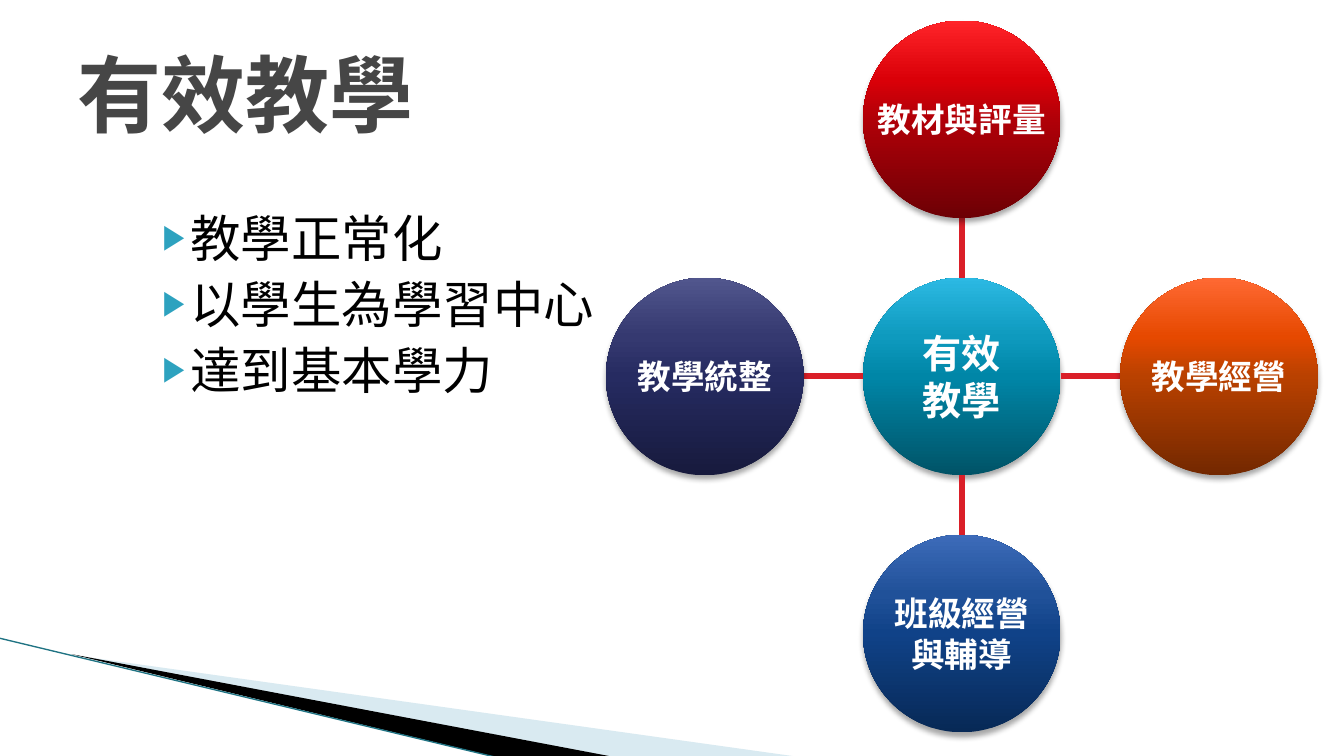
"""Builds the effective teaching slide: a short list beside a hub of five circles."""
from dataclasses import dataclass

from lxml import etree
from pptx import Presentation
from pptx import util as u
from pptx.dml import color
from pptx.enum import shapes, text
from pptx.oxml import ns


@dataclass(frozen=True)
class Theme:
    heading_font: str = "Noto Sans Mono"
    circle_font: str = "Arial"
    title_size: int = 60
    body_size: int = 36
    hub_size: int = 28
    circle_size: int = 24
    title: str = "464646"
    ink: str = "000000"
    white: str = "FFFFFF"
    bullet: str = "2DA2BF"
    spoke: str = "DA1F28"
    pale_wedge: str = "A0CBDC"
    edge: str = "1F7383"
    teal: tuple = ("005367", "0086A7", "0E9ABE", "2CB9E3")
    red: tuple = ("6D0005", "B00008", "DA0008", "FF2429")
    orange: tuple = ("732800", "B94100", "E64900", "FF6933")
    blue: tuple = ("072956", "104288", "205199", "3D6BB9")
    indigo: tuple = ("171A3D", "262B61", "353970", "51568D")


def add_xml(parent, tag, **attributes):
    return etree.SubElement(parent, ns.qn(tag), attributes)


class SlideBuilder:
    def __init__(self, page, theme):
        self.page = page
        self.theme = theme

    def place(self, box, left, top, width, height):
        box.left, box.top = u.Inches(left), u.Inches(top)
        box.width, box.height = u.Inches(width), u.Inches(height)

    def style(self, para, font_name, size, ink, bold=False):
        for span in para.runs:
            span.font.name = font_name
            span.font.size = u.Pt(size)
            span.font.bold = bold
            span.font.color.rgb = color.RGBColor.from_string(ink)
            add_xml(span.font._element, "a:ea", typeface=font_name)

    def title(self, words, *area):
        box = self.page.shapes.title
        self.place(box, *area)
        frame = box.text_frame
        frame.text = words
        frame.auto_size = text.MSO_AUTO_SIZE.NONE
        frame.vertical_anchor = text.MSO_ANCHOR.MIDDLE
        para = frame.paragraphs[0]
        para.alignment = text.PP_ALIGN.LEFT
        self.style(para, self.theme.heading_font, self.theme.title_size, self.theme.title, True)

    def bullets(self, items, *area):
        box = self.page.placeholders[1]
        self.place(box, *area)
        frame = box.text_frame
        frame.text = "\n".join(items)
        frame.auto_size = text.MSO_AUTO_SIZE.NONE
        for index, para in enumerate(frame.paragraphs):
            para.space_before = u.Pt(4 if index else 0)
            settings = para._p.get_or_add_pPr()
            settings.set("marL", str(u.Inches(0.4)))
            settings.set("indent", str(u.Inches(-0.28)))
            add_xml(add_xml(settings, "a:buClr"), "a:srgbClr", val=self.theme.bullet)
            add_xml(settings, "a:buSzPct", val="68000")
            add_xml(settings, "a:buChar", char="▶")
            self.style(para, self.theme.heading_font, self.theme.body_size, self.theme.ink)

    def wedge(self, points, fill, opacity=100):
        corners = [(u.Inches(x), u.Inches(y)) for x, y in points]
        builder = self.page.shapes.build_freeform(*corners[0])
        builder.add_line_segments(corners[1:], close=True)
        shape = builder.convert_to_shape()
        shape.shadow.inherit = False
        shape.line.fill.background()
        shape.fill.solid()
        shape.fill.fore_color.rgb = color.RGBColor.from_string(fill)
        if opacity < 100:
            tint = shape._element.spPr.find(".//" + ns.qn("a:srgbClr"))
            add_xml(tint, "a:alpha", val=str(opacity * 1000))

    def line(self, start, end, ink, width):
        ends = [u.Inches(value) for value in (*start, *end)]
        connector = self.page.shapes.add_connector(shapes.MSO_CONNECTOR.STRAIGHT, *ends)
        connector.line.color.rgb = color.RGBColor.from_string(ink)
        connector.line.width = u.Pt(width)
        add_xml(connector._element.spPr, "a:effectLst")

    def circle(self, words, center, diameter, shades, size):
        left, top = (value - diameter / 2 for value in center)
        shape = self.page.shapes.add_shape(
            shapes.MSO_SHAPE.OVAL, u.Inches(left), u.Inches(top), u.Inches(diameter), u.Inches(diameter))
        shape.line.fill.background()
        shape.fill.gradient()
        shape.fill.gradient_angle = 90
        properties = shape._element.spPr
        stops = properties.find(".//" + ns.qn("a:gsLst"))
        for stop in list(stops):
            stops.remove(stop)
        for position, shade in zip((0, 50, 70, 100), shades):
            add_xml(add_xml(stops, "a:gs", pos=str(position * 1000)), "a:srgbClr", val=shade)
        shape.shadow.inherit = False
        shadow = add_xml(properties.find(ns.qn("a:effectLst")), "a:outerShdw", blurRad=str(u.Pt(4)),
                         dist=str(u.Pt(3)), dir="5400000", rotWithShape="0")
        add_xml(add_xml(shadow, "a:srgbClr", val=self.theme.ink), "a:alpha", val="35000")
        frame = shape.text_frame
        frame.text = words
        frame.word_wrap = False
        frame.vertical_anchor = text.MSO_ANCHOR.MIDDLE
        frame.margin_left = frame.margin_right = frame.margin_top = frame.margin_bottom = u.Inches(0.02)
        for para in frame.paragraphs:
            para.alignment = text.PP_ALIGN.CENTER
            self.style(para, self.theme.circle_font, size, self.theme.white, True)


def main():
    theme = Theme()
    deck = Presentation()
    deck.slide_width, deck.slide_height = u.Inches(13.33), u.Inches(7.5)
    slide = SlideBuilder(deck.slides.add_slide(deck.slide_layouts[1]), theme)

    slide.wedge([(0.73, 6.5), (7.93, 7.51), (6.08, 7.51)], theme.pale_wedge, 40)
    slide.wedge([(0.71, 6.49), (6.09, 7.51), (4.96, 7.52)], theme.ink)
    slide.line((-0.01, 6.33), (4.95, 7.52), theme.edge, 0.95)

    slide.bullets(["教學正常化", "以學生為學習中心", "達到基本學力"], 1.39, 2, 10, 4.83)
    slide.title("有效教學", 0.67, 0.3, 12, 1.25)

    hub_x, hub_y = 9.54, 3.735
    diameter, reach = 1.96, 2.55
    radius = diameter / 2
    slide.circle("有效\n教學", (hub_x, hub_y), diameter, theme.teal, theme.hub_size)
    topics = [
        ("教材與評量", 0, -1, theme.red),
        ("教學經營", 1, 0, theme.orange),
        ("班級經營\n與輔導", 0, 1, theme.blue),
        ("教學統整", -1, 0, theme.indigo),
    ]
    for words, across, down, shades in topics:
        start, end = ((hub_x + across * step, hub_y + down * step) for step in (radius, reach - radius))
        slide.line(start, end, theme.spoke, 4.33)
        center = (hub_x + across * reach, hub_y + down * reach)
        slide.circle(words, center, diameter, shades, theme.circle_size)

    deck.save("out.pptx")


if __name__ == "__main__":
    main()
